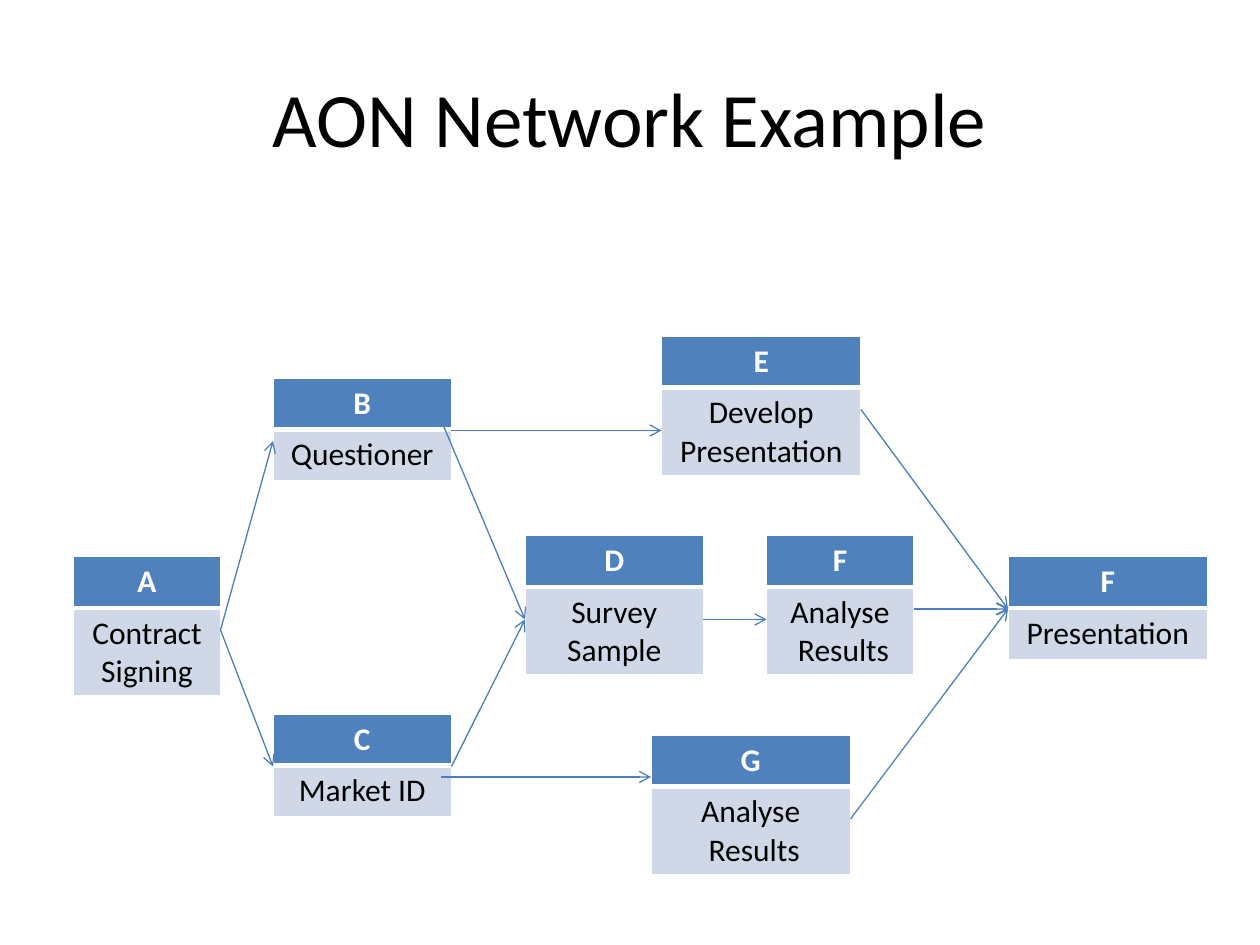
from dataclasses import dataclass

from lxml import etree
from pptx import Presentation
from pptx.dml.color import RGBColor
from pptx.enum.shapes import MSO_CONNECTOR
from pptx.enum.text import MSO_ANCHOR, PP_ALIGN
from pptx.oxml.ns import qn
from pptx.util import Pt

PX = 7620  # EMU, 120 px to the inch
STRAIGHT = MSO_CONNECTOR.STRAIGHT
CENTER = PP_ALIGN.CENTER
TOP, MIDDLE = MSO_ANCHOR.TOP, MSO_ANCHOR.MIDDLE
ROW, TALL = 49, 84


@dataclass(frozen=True)
class Theme:
    font: str = "Calibri"
    title: int = 44
    body: int = 18
    black: str = "000000"
    white: str = "FFFFFF"
    head: str = "4F81BD"
    pale: str = "D0D8E8"
    line: str = "4B7EBC"
    thin: float = 0.75
    edge: int = 1
    rule: int = 3


THEME = Theme()

# left, top, width, letter, task lines
NODES = [
    (70, 530, 140, "A", ["Contract", "Signing"]),
    (260, 360, 170, "B", ["Questioner"]),
    (260, 680, 170, "C", ["Market ID"]),
    (500, 510, 170, "D", ["Survey", "Sample"]),
    (630, 320, 190, "E", ["Develop", "Presentation"]),
    (730, 510, 140, "F", ["Analyse", " Results"]),
    (620, 700, 190, "G", ["Analyse", " Results"]),
    (960, 530, 190, "F", ["Presentation"]),
]

# x and y of the start, x and y of the end
LINKS = [
    (210, 600, 260, 730),
    (210, 600, 260, 420),
    (420, 400, 500, 590),
    (430, 730, 500, 590),
    (670, 590, 730, 590),
    (430, 410, 630, 410),
    (420, 740, 620, 740),
    (820, 390, 960, 580),
    (810, 780, 960, 580),
    (870, 580, 960, 580),
]


def scale(*sizes):
    return [size * PX for size in sizes]


def write(frame, lines, size=THEME.body, color=THEME.black, bold=False):
    frame.word_wrap = True
    for i, line in enumerate(lines):
        para = frame.paragraphs[0] if i == 0 else frame.add_paragraph()
        para.alignment = CENTER
        run = para.add_run()
        run.text = line
        font = run.font
        font.name, font.size, font.bold = THEME.font, Pt(size), bold
        font.color.rgb = RGBColor.from_string(color)


def add_title(slide, text):
    box = slide.shapes.add_textbox(*scale(60, 36, 1080, 150))
    box.text_frame.vertical_anchor = MIDDLE
    write(box.text_frame, [text], size=THEME.title)


def set_edges(cell, **widths):
    """Draw white cell borders; widths in points override the thin edge."""
    props = cell._tc.get_or_add_tcPr()
    for i, side in enumerate("LRTB"):
        width = Pt(widths.get(side, THEME.edge))
        line = etree.Element(qn(f"a:ln{side}"), w=str(width))
        fill = etree.SubElement(line, qn("a:solidFill"))
        etree.SubElement(fill, qn("a:srgbClr"), val=THEME.white)
        props.insert(i, line)


def paint(cell, color):
    cell.fill.solid()
    cell.fill.fore_color.rgb = RGBColor.from_string(color)
    cell.vertical_anchor = TOP


def add_node(slide, left, top, width, letter, task):
    low = TALL if len(task) > 1 else ROW
    area = scale(left, top, width, ROW + low)
    table = slide.shapes.add_table(2, 1, *area).table
    table.first_row = table.horz_banding = False
    table.rows[0].height, table.rows[1].height = scale(ROW, low)
    head, body = table.cell(0, 0), table.cell(1, 0)
    paint(head, THEME.head)
    paint(body, THEME.pale)
    set_edges(head, B=THEME.rule)
    set_edges(body, T=THEME.rule)
    write(head.text_frame, [letter], color=THEME.white, bold=True)
    write(body.text_frame, task)


def add_arrow(slide, *ends):
    arrow = slide.shapes.add_connector(STRAIGHT, *scale(*ends))
    arrow.line.width = Pt(THEME.thin)
    arrow.line.color.rgb = RGBColor.from_string(THEME.line)
    etree.SubElement(arrow.line._get_or_add_ln(), qn("a:tailEnd"), type="arrow")
    etree.SubElement(arrow._element.spPr, qn("a:effectLst"))


def main():
    deck = Presentation()
    deck.slide_width, deck.slide_height = scale(1200, 900)
    slide = deck.slides.add_slide(deck.slide_layouts[6])
    add_title(slide, "AON Network Example")
    for node in NODES:
        add_node(slide, *node)
    for link in LINKS:
        add_arrow(slide, *link)
    deck.save("out.pptx")


if __name__ == "__main__":
    main()
